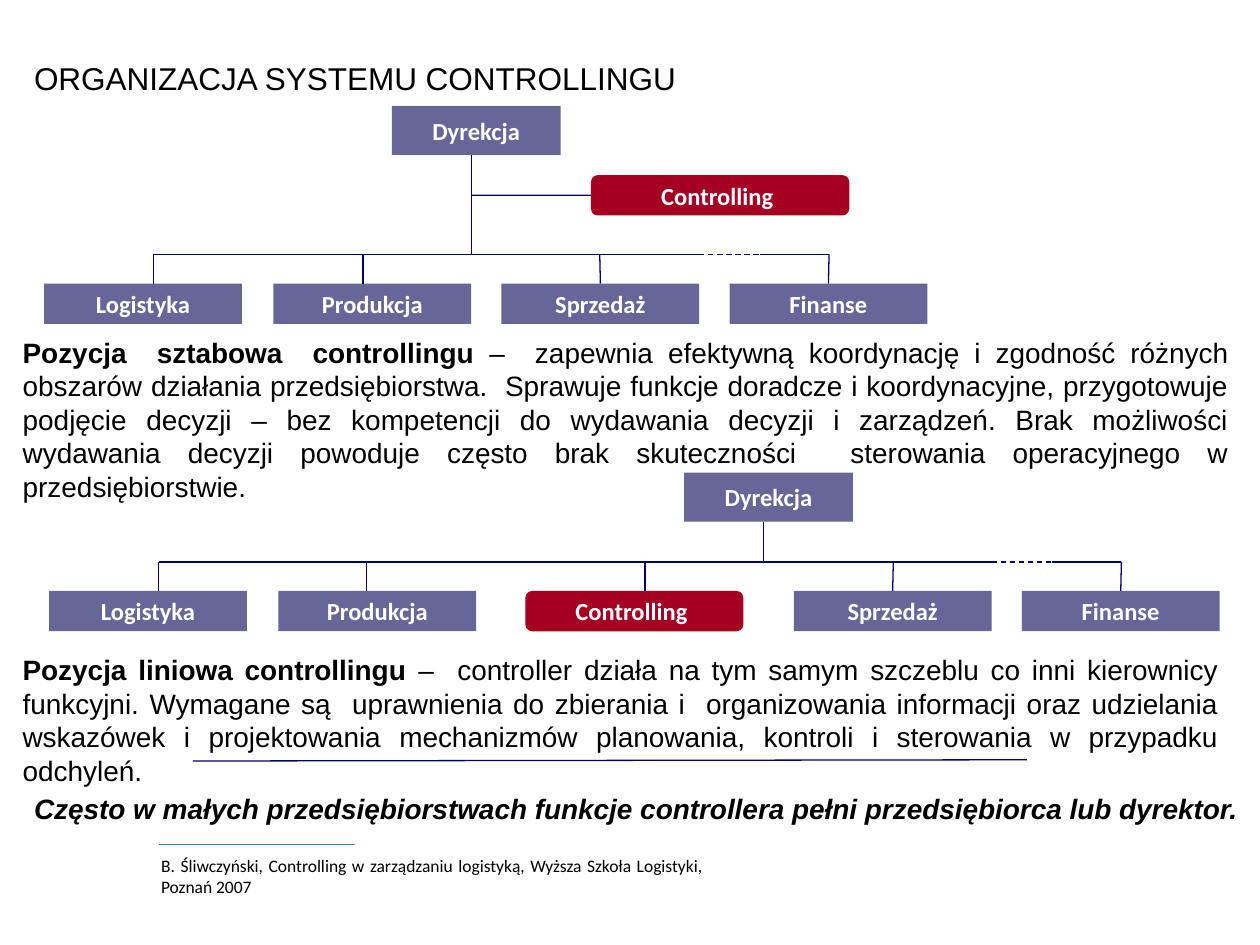
from lxml.etree import SubElement
from pptx import Presentation
from pptx.dml.color import RGBColor
from pptx.enum.dml import MSO_LINE
from pptx.enum.shapes import MSO_CONNECTOR, MSO_SHAPE
from pptx.enum.text import MSO_ANCHOR, MSO_AUTO_SIZE, PP_ALIGN
from pptx.oxml.ns import qn
from pptx.util import Inches, Pt

BLACK, WHITE, NAVY = "000000", "FFFFFF", "000066"
SLATE, CRIMSON, BLUE = "666699", "A50021", "4B7EBC"
DEPARTMENT_WIDTH, BOX_HEIGHT = 1.57, 0.32
DIRECTOR_WIDTH, DIRECTOR_HEIGHT = 1.34, 0.39
DROP = 0.23  # from the horizontal bar down to the departments

TITLE = "ORGANIZACJA SYSTEMU CONTROLLINGU"
CONTROLLING = "Controlling "

# Departments: name, left, width, x of the line from the bar
CHARTS = [
    {
        "director": (3.11, 0.84), "stem": 3.74, "bar": 2.02, "staff": (4.69, 1.39, 2.05),
        "departments": [
            ("Logistyka", 0.35, DEPARTMENT_WIDTH, 1.22),
            ("Produkcja", 2.17, DEPARTMENT_WIDTH, 2.88),
            ("Sprzedaż", 3.98, DEPARTMENT_WIDTH, 4.76),
            ("Finanse", 5.79, DEPARTMENT_WIDTH, 6.58),
        ],
    },
    {
        "director": (5.43, 3.75), "stem": 6.06, "bar": 4.46, "staff": None,
        "departments": [
            ("Logistyka", 0.39, DEPARTMENT_WIDTH, 1.26),
            ("Produkcja", 2.21, DEPARTMENT_WIDTH, 2.91),
            (CONTROLLING, 4.17, 1.73, 5.12),
            ("Sprzedaż", 6.3, DEPARTMENT_WIDTH, 7.09),
            ("Finanse", 8.11, DEPARTMENT_WIDTH, 8.9),
        ],
    },
]

DESCRIPTIONS = [
    ((0.16, 2.65, 9.61, 1.02), "Pozycja  sztabowa  controllingu ",
     "–  zapewnia efektywną koordynację i zgodność różnych obszarów działania "
     "przedsiębiorstwa.  Sprawuje funkcje doradcze i koordynacyjne, przygotowuje podjęcie "
     "decyzji – bez kompetencji do wydawania decyzji i zarządzeń. Brak możliwości wydawania "
     "decyzji powoduje często brak skuteczności  sterowania operacyjnego w przedsiębiorstwie. "),
    ((0.16, 5.17, 9.53, 0.79), "Pozycja liniowa controllingu ",
     "–  controller działa na tym samym szczeblu co inni kierownicy funkcyjni. Wymagane są  "
     "uprawnienia do zbierania i  organizowania informacji oraz udzielania wskazówek i "
     "projektowania mechanizmów planowania, kontroli i sterowania w przypadku odchyleń. "),
]
REMARK = ("Często w małych przedsiębiorstwach funkcje controllera pełni przedsiębiorca "
          "lub dyrektor.")
SOURCE = ("B. Śliwczyński, Controlling w zarządzaniu logistyką, Wyższa Szkoła Logistyki, "
          "Poznań 2007")


def color(value):
    return RGBColor.from_string(value)


def format_run(run, size, name="Arial", fill=BLACK, bold=False, italic=False):
    font = run.font
    font.size, font.name, font.bold, font.italic = Pt(size), name, bold, italic
    font.color.rgb = color(fill)


def add_line(shapes, start, end, line_color=NAVY, dashed=False):
    line = shapes.add_connector(MSO_CONNECTOR.STRAIGHT, *map(Inches, start + end))
    line.line.color.rgb = color(line_color)
    line.line.width = Pt(0.75)
    if dashed:
        line.line.dash_style = MSO_LINE.DASH
    SubElement(line._element.spPr, qn("a:effectLst"))
    return line


def add_box(shapes, label, left, top, width, height=BOX_HEIGHT):
    special = label == CONTROLLING
    kind = MSO_SHAPE.ROUNDED_RECTANGLE if special else MSO_SHAPE.RECTANGLE
    box = shapes.add_shape(kind, *map(Inches, (left, top, width, height)))
    box.shadow.inherit = False
    box.fill.solid()
    box.fill.fore_color.rgb = color(CRIMSON if special else SLATE)
    box.line.fill.background()
    frame = box.text_frame
    frame.text = label
    frame.word_wrap = False
    frame.vertical_anchor = MSO_ANCHOR.MIDDLE
    frame.paragraphs[0].alignment = PP_ALIGN.CENTER
    format_run(frame.paragraphs[0].runs[0], 14, "Calibri", WHITE, bold=True)
    return box


def add_text(shapes, place, alignment, tight=True):
    """Add an empty wrapped text box and return its paragraph."""
    frame = shapes.add_textbox(*map(Inches, place)).text_frame
    frame.word_wrap = True
    if tight:
        frame.margin_left = frame.margin_right = Inches(0.02)
        frame.margin_top = frame.margin_bottom = Inches(0.01)
    frame.paragraphs[0].alignment = alignment
    return frame.paragraphs[0]


def add_chart(shapes, director, stem, bar, staff, departments):
    left, top = director
    add_box(shapes, "Dyrekcja", left, top, DIRECTOR_WIDTH, DIRECTOR_HEIGHT)
    add_line(shapes, (stem, top + DIRECTOR_HEIGHT), (stem, bar))
    if staff:
        staff_left, staff_top, staff_width = staff
        staff_box = add_box(shapes, CONTROLLING, staff_left, staff_top, staff_width)
        middle = staff_top + BOX_HEIGHT / 2
        add_line(shapes, (stem, middle), (staff_left, middle)).end_connect(staff_box, 1)

    # The bar is dashed between the last two departments
    first_drop, last_drop = departments[0][3], departments[-1][3]
    dash_start = departments[-2][1] + DEPARTMENT_WIDTH
    dash_end = dash_start + 0.48
    add_line(shapes, (first_drop, bar), (dash_start, bar))
    add_line(shapes, (dash_start, bar), (dash_end, bar), dashed=True)
    add_line(shapes, (dash_end, bar), (last_drop, bar))

    for name, left, width, drop in departments:
        box = add_box(shapes, name, left, bar + DROP, width)
        line = add_line(shapes, (drop, bar), (drop, bar + DROP))
        if abs(left + width / 2 - drop) < 0.01:
            line.end_connect(box, 0)


def main():
    presentation = Presentation()
    presentation.slide_width, presentation.slide_height = Inches(10), Inches(7.5)
    slide = presentation.slides.add_slide(presentation.slide_layouts[5])
    shapes = slide.shapes

    title = shapes.title
    title.left, title.top, title.width, title.height = map(Inches, (0.17, 0.42, 7.83, 0.4))
    frame = title.text_frame
    frame.text = TITLE
    frame.auto_size = MSO_AUTO_SIZE.NONE
    frame.vertical_anchor = MSO_ANCHOR.MIDDLE
    frame.paragraphs[0].alignment = PP_ALIGN.LEFT
    format_run(frame.paragraphs[0].runs[0], 18)

    for chart in CHARTS:
        add_chart(shapes.add_group_shape().shapes, **chart)

    for place, heading, body in DESCRIPTIONS:
        paragraph = add_text(shapes, place, PP_ALIGN.JUSTIFY)
        for text, bold in ((heading, True), (body, False)):
            run = paragraph.add_run()
            run.text = text
            format_run(run, 16, bold=bold)

    add_line(shapes, (1.53, 6.04), (8.15, 6.03))
    paragraph = add_text(shapes, (0.25, 6.27, 9.75, 0.39), PP_ALIGN.LEFT)
    paragraph.text = REMARK
    format_run(paragraph.runs[0], 16, bold=True, italic=True)

    add_line(shapes, (1.26, 6.7), (2.82, 6.7), BLUE)
    paragraph = add_text(shapes, (1.18, 6.74, 4.49, 0.44), PP_ALIGN.JUSTIFY, tight=False)
    paragraph.text = SOURCE
    format_run(paragraph.runs[0], 10, "Calibri")

    presentation.save("out.pptx")


if __name__ == "__main__":
    main()
